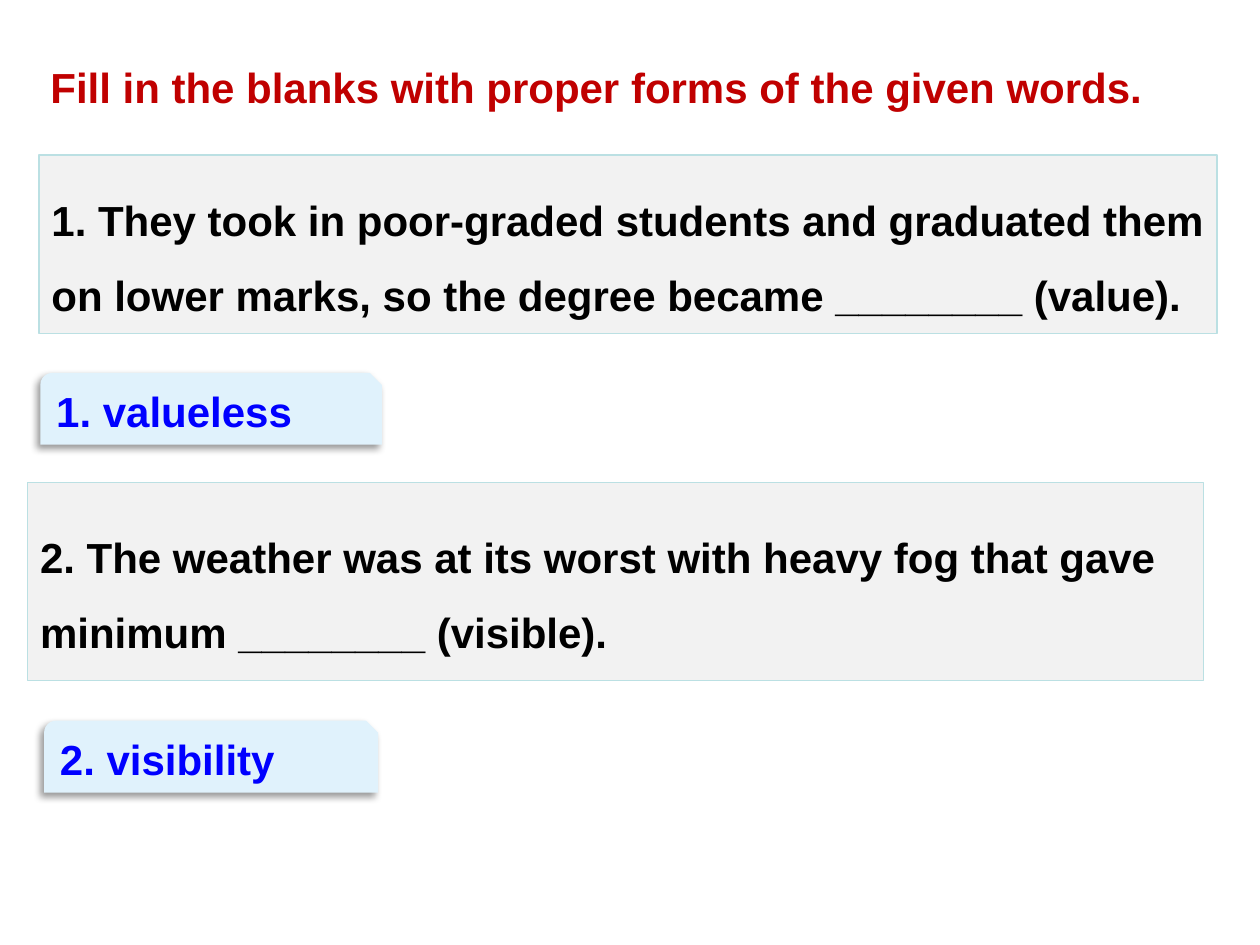
"""Build a fill-in-the-blanks vocabulary slide with two questions and answers."""
from lxml import etree
from pptx import Presentation
from pptx.dml.color import RGBColor
from pptx.enum.shapes import MSO_SHAPE
from pptx.enum.text import MSO_ANCHOR, MSO_AUTO_SIZE, PP_ALIGN
from pptx.oxml import parse_xml
from pptx.oxml.ns import qn
from pptx.util import Inches, Pt

RED = RGBColor(0xC0, 0x00, 0x00)
BLACK = RGBColor(0x00, 0x00, 0x00)
BLUE = RGBColor(0x00, 0x00, 0xFF)
GREY = RGBColor(0xF2, 0xF2, 0xF2)
TEAL = RGBColor(0xBB, 0xE0, 0xE3)
PALE_BLUE = RGBColor(0xE0, 0xF2, 0xFC)
RECTANGLE = MSO_SHAPE.RECTANGLE
SNIP_ROUND = MSO_SHAPE.SNIP_ROUND_RECTANGLE
TOP, MIDDLE = MSO_ANCHOR.TOP, MSO_ANCHOR.MIDDLE
LEFT = PP_ALIGN.LEFT
GROW = MSO_AUTO_SIZE.SHAPE_TO_FIT_TEXT
NO_FIT = MSO_AUTO_SIZE.NONE
SHADOW = (
    '<a:outerShdw xmlns:a="http://schemas.openxmlformats.org/drawingml/2006/main"'
    ' blurRad="50800" dist="38100" dir="8100000" algn="tr" rotWithShape="0">'
    '<a:srgbClr val="000000"><a:alpha val="40000"/></a:srgbClr></a:outerShdw>'
)


def write(shape, text, color, anchor=MIDDLE, spacing=1.0, fit=NO_FIT):
    frame = shape.text_frame
    frame.word_wrap = True
    frame.auto_size = fit
    frame.vertical_anchor = anchor
    paragraph = frame.paragraphs[0]
    paragraph.alignment = LEFT
    paragraph.line_spacing = spacing
    run = paragraph.add_run()
    run.text = text
    run.font.name = "Arial"
    run.font.size = Pt(24)
    run.font.bold = True
    run.font.color.rgb = color


prs = Presentation()
prs.slide_width, prs.slide_height = Inches(10), Inches(7.5)
slide = prs.slides.add_slide(prs.slide_layouts[5])

heading = slide.shapes.title
heading.left, heading.top = Inches(0.3), Inches(0.44)
heading.width, heading.height = Inches(9.33), Inches(0.5)
write(heading, "Fill in the blanks with proper forms of the given words.", RED,
      anchor=TOP, fit=GROW)

questions = [
    ("1. They took in poor-graded students and graduated them on lower marks, "
     "so the degree became ________ (value).", (0.31, 1.23, 9.35, 1.42)),
    ("2. The weather was at its worst with heavy fog that gave minimum "
     "________ (visible).", (0.22, 3.83, 9.33, 1.57)),
]
for sentence, box in questions:
    question = slide.shapes.add_shape(RECTANGLE, *map(Inches, box))
    question.shadow.inherit = False
    question.fill.solid()
    question.fill.fore_color.rgb = GREY
    question.line.color.rgb = TEAL
    question.line.width = Pt(0.75)
    write(question, sentence, BLACK, spacing=1.5)

answers = [
    ("1. valueless", (0.32, 2.96, 2.71, 0.57)),
    ("2. visibility", (0.35, 5.72, 2.65, 0.57)),
]
for word, box in answers:
    answer = slide.shapes.add_shape(SNIP_ROUND, *map(Inches, box))
    answer.shadow.inherit = False
    answer.fill.solid()
    answer.fill.fore_color.rgb = PALE_BLUE
    answer.line.fill.background()
    effects = answer.element.spPr.find(qn("a:effectLst"))
    effects.append(etree.fromstring(SHADOW))
    write(answer, word, BLUE)

prs.save("out.pptx")
